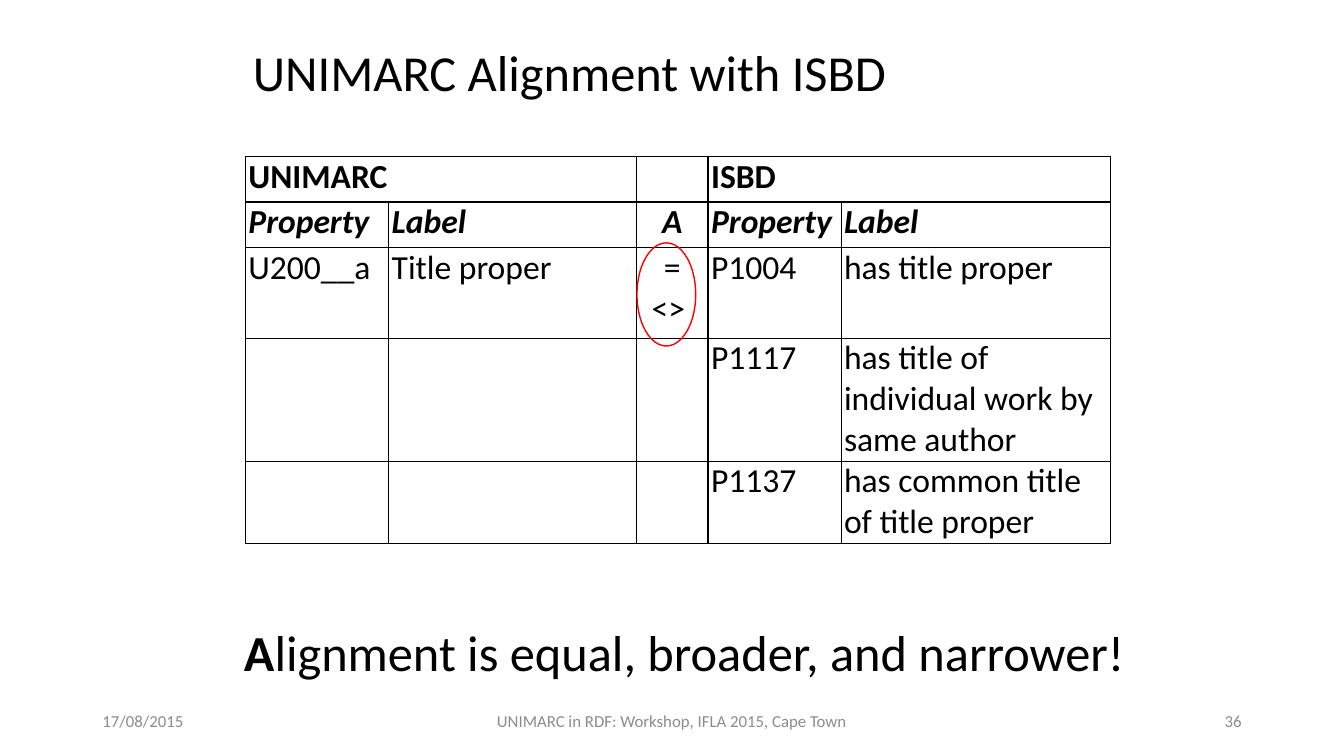
from lxml import etree
from pptx import Presentation
from pptx.dml.color import RGBColor
from pptx.enum import shapes, text
from pptx.oxml import ns
from pptx.util import Cm, Pt

COLORS = {"ink": "000000", "footer": "8C8C8C", "ring": "FF0000"}
FONT = "Calibri"
LEFT, CENTER, RIGHT = text.PP_ALIGN.LEFT, text.PP_ALIGN.CENTER, text.PP_ALIGN.RIGHT
TOP, MIDDLE = text.MSO_ANCHOR.TOP, text.MSO_ANCHOR.MIDDLE

COLUMN_WIDTHS = [3.61, 6.25, 1.8, 3.35, 6.8]
ROW_HEIGHTS = [1.15, 1.15, 2.28, 3.1, 2.06]
SYMBOL_COLUMN = 2
ROWS = [
    ["UNIMARC", "", "", "ISBD", ""],
    ["Property", "Label", "A", "Property", "Label"],
    ["U200__a", "Title proper", "=\n<> ", "P1004", "has title proper"],
    ["", "", "", "P1117", "has title of individual work by same author"],
    ["", "", "", "P1137", "has common title of title proper"],
]


def add_span(para, words, size, color="ink", bold=False, italic=False):
    span = para.add_run()
    span.text = words
    font = span.font
    font.name, font.size, font.bold, font.italic = FONT, Pt(size), bold, italic
    font.color.rgb = RGBColor.from_string(COLORS[color])


def place(shape, left, top, width, height):
    shape.left, shape.top, shape.width, shape.height = map(Cm, (left, top, width, height))


def fill_frame(frame, spans, size, color="ink", align=LEFT, anchor=TOP, wrap=True):
    """Write one paragraph from (words, bold) pairs."""
    frame.word_wrap = wrap
    frame.auto_size = text.MSO_AUTO_SIZE.NONE
    frame.vertical_anchor = anchor
    para = frame.paragraphs[0]
    para.alignment = align
    for words, bold in spans:
        add_span(para, words, size, color, bold)


def add_label(page, position, spans, size, **style):
    box = page.shapes.add_textbox(*map(Cm, position))
    fill_frame(box.text_frame, spans, size, **style)


def add_title(page, words):
    title = page.shapes.title
    place(title, 6.12, 0.91, 16.64, 1.8)
    fill_frame(title.text_frame, [(words, False)], 36, wrap=False)


def add_border(cell, side, points):
    properties = cell._tc.get_or_add_tcPr()
    line = etree.SubElement(properties, ns.qn(f"a:ln{side}"), w=str(Pt(points)))
    fill = etree.SubElement(line, ns.qn("a:solidFill"))
    etree.SubElement(fill, ns.qn("a:srgbClr"), val=COLORS["ink"])


def format_cell(cell, row, column):
    cell.margin_left = cell.margin_right = Cm(0.08)
    cell.margin_top = cell.margin_bottom = 0
    # Heavier rules below the first row and right of the symbol column
    heavy = {"L": column == SYMBOL_COLUMN + 1, "R": column == SYMBOL_COLUMN,
             "T": row == 1, "B": row == 0}
    for side, is_heavy in heavy.items():
        add_border(cell, side, 1 if is_heavy else 0.5)
    cell.fill.background()


def write_cell(cell, words, row, column):
    for index, line in enumerate(words.split("\n")):
        frame = cell.text_frame
        para = frame.add_paragraph() if index else frame.paragraphs[0]
        para.alignment = CENTER if column == SYMBOL_COLUMN else LEFT
        add_span(para, line, 24, bold=row < 2, italic=row == 1)


def add_alignment_table(page):
    frame = page.shapes.add_table(
        len(ROWS), len(COLUMN_WIDTHS), Cm(6.18), Cm(3.94),
        Cm(sum(COLUMN_WIDTHS)), Cm(sum(ROW_HEIGHTS)))
    table = frame.table
    table.first_row = table.horz_banding = False
    for column, width in zip(table.columns, COLUMN_WIDTHS):
        column.width = Cm(width)
    for row, height in zip(table.rows, ROW_HEIGHTS):
        row.height = Cm(height)
    for first in (0, 3):
        table.cell(0, first).merge(table.cell(0, first + 1))
    for row, entries in enumerate(ROWS):
        for column, words in enumerate(entries):
            cell = table.cell(row, column)
            format_cell(cell, row, column)
            if words:
                write_cell(cell, words, row, column)


def add_ring(page):
    ring = page.shapes.add_shape(shapes.MSO_SHAPE.OVAL, Cm(6.32 * 2.54), Cm(6.12), Cm(1.48), Cm(2.6))
    ring.shadow.inherit = False
    ring.fill.background()
    ring.line.color.rgb = RGBColor.from_string(COLORS["ring"])
    ring.line.width = Pt(1)


def main():
    deck = Presentation()
    deck.slide_width, deck.slide_height = Cm(33.87), Cm(19.05)
    page = deck.slides.add_slide(deck.slide_layouts[5])

    # Title, table and conclusion
    add_title(page, "UNIMARC Alignment with ISBD")
    add_alignment_table(page)
    add_label(page, (5.8, 15.52, 22.9, 1.8),
              [("A", True), ("lignment is equal, broader, and narrower!", False)],
              36, align=CENTER, wrap=False)

    # Highlight around the alignment symbols
    add_ring(page)

    # Footer
    for left, width, words, align in [
        (2.33, 7.62, "17/08/2015", LEFT),
        (11.22, 11.43, "UNIMARC in RDF: Workshop, IFLA 2015, Cape Town", CENTER),
        (23.92, 7.62, "36", RIGHT),
    ]:
        add_label(page, (left, 17.66, width, 1.01), [(words, False)], 12,
                  color="footer", align=align, anchor=MIDDLE)

    deck.save("out.pptx")


if __name__ == "__main__":
    main()
